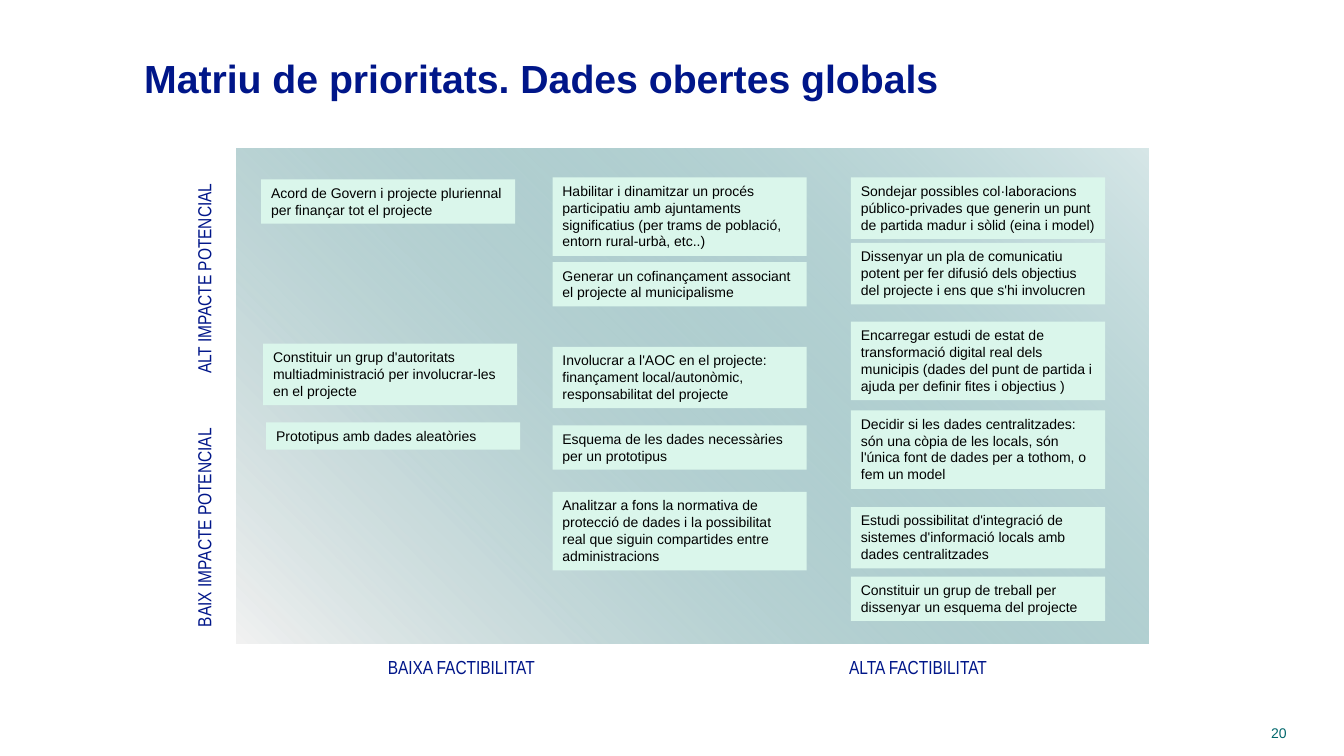
from pptx import Presentation
from pptx.dml.color import RGBColor
from pptx.enum.shapes import MSO_SHAPE
from pptx.enum.text import MSO_ANCHOR, MSO_AUTO_SIZE, PP_ALIGN
from pptx.oxml.ns import qn
from pptx.util import Inches, Pt
from lxml import etree

RECTANGLE = MSO_SHAPE.RECTANGLE
TOP, MIDDLE = MSO_ANCHOR.TOP, MSO_ANCHOR.MIDDLE
GROW, FIXED = MSO_AUTO_SIZE.SHAPE_TO_FIT_TEXT, MSO_AUTO_SIZE.NONE
LEFT, CENTER, RIGHT = PP_ALIGN.LEFT, PP_ALIGN.CENTER, PP_ALIGN.RIGHT

NAVY = RGBColor(0x00, 0x16, 0x89)
TEAL = RGBColor(0x00, 0x67, 0x6C)
PALE_GREY = RGBColor(0xF2, 0xF2, 0xF2)
MINT = RGBColor(0xDA, 0xF6, 0xEB)
BLACK = RGBColor(0x00, 0x00, 0x00)

NOTE_WIDTH = 2.52
NOTE_PADDING = 0.1
NOTE_LINE = 0.17

# Notes by column: left, top, number of lines, text
NOTES = [
    # Low feasibility
    (2.59, 1.78, 2, "Acord de Govern i projecte pluriennal per finançar tot el projecte"),
    (2.61, 3.41, 3, "Constituir un grup d'autoritats multiadministració per "
                    "involucrar-les en el projecte"),
    (2.64, 4.19, 1, "Prototipus amb dades aleatòries"),
    # Medium feasibility
    (5.48, 1.76, 4, "Habilitar i dinamitzar un procés participatiu amb ajuntaments "
                    "significatius (per trams de població, entorn rural-urbà, etc..)"),
    (5.48, 2.6, 2, "Generar un cofinançament associant el projecte al municipalisme"),
    (5.48, 3.44, 3, "Involucrar a l'AOC en el projecte: finançament local/autonòmic, "
                    "responsabilitat del projecte"),
    (5.48, 4.22, 2, "Esquema de les dades necessàries per un prototipus"),
    (5.48, 4.88, 4, "Analitzar a fons la normativa de protecció de dades i la "
                    "possibilitat real que siguin compartides entre administracions"),
    # High feasibility
    (8.44, 1.76, 3, "Sondejar possibles col·laboracions público-privades que generin "
                    "un punt de partida madur i sòlid (eina i model)"),
    (8.44, 2.41, 3, "Dissenyar un pla de comunicatiu potent per fer difusió dels "
                    "objectius del projecte i ens que s'hi involucren"),
    (8.44, 3.19, 4, "Encarregar estudi de estat de transformació digital real dels "
                    "municipis (dades del punt de partida i ajuda per definir fites "
                    "i objectius )"),
    (8.44, 4.07, 4, "Decidir si les dades centralitzades: són una còpia de les locals, "
                    "són l'única font de dades per a tothom, o fem un model"),
    (8.44, 5.03, 3, "Estudi possibilitat d'integració de sistemes d'informació locals "
                    "amb dades centralitzades"),
    (8.44, 5.72, 2, "Constituir un grup de treball per dissenyar un esquema del projecte"),
]

# Axis labels: left, top, width, rotation, text
AXIS_LABELS = [
    (2.32, 6.46, 4.51, 0, "BAIXA FACTIBILITAT"),
    (6.85, 6.46, 4.51, 0, "ALTA FACTIBILITAT"),
    (0.65, 5.07, 2.75, 270, "BAIX IMPACTE POTENCIAL"),
    (0.65, 2.6, 2.75, 270, "ALT IMPACTE POTENCIAL"),
]


class MatrixPage:
    title_font = {"name": "Arial", "size": Pt(28), "bold": True}
    label_font = {"name": "Arial Narrow", "size": Pt(13.5)}
    small_font = {"name": "Arial", "size": Pt(10)}

    def __init__(self, deck):
        self.page = deck.slides.add_slide(deck.slide_layouts[5])

    def set_text(self, shape, text, font, color, align=LEFT, anchor=TOP, auto_size=GROW):
        frame = shape.text_frame
        frame_format = {"word_wrap": True, "vertical_anchor": anchor,
                        "auto_size": auto_size}
        for key, value in frame_format.items():
            setattr(frame, key, value)
        para = frame.paragraphs[0]
        para.alignment = align
        span = para.add_run()
        span.text = text
        for key, value in font.items():
            setattr(span.font, key, value)
        span.font.color.rgb = color

    def title(self, text):
        shape = self.page.shapes.title
        place = {"left": 1.33, "top": 0.46, "width": 11.36, "height": 0.62}
        for key, value in place.items():
            setattr(shape, key, Inches(value))
        self.set_text(shape, text, self.title_font, NAVY, anchor=MIDDLE, auto_size=FIXED)

    def rectangle(self, left, top, width, height):
        shape = self.page.shapes.add_shape(
            RECTANGLE, Inches(left), Inches(top), Inches(width), Inches(height))
        shape.shadow.inherit = False
        shape.line.fill.background()
        return shape

    def background(self, left, top, width, height):
        shape = self.rectangle(left, top, width, height)
        fill = shape.fill
        fill.gradient()
        fill.gradient_angle = 45
        start, end = fill.gradient_stops
        for stop, color, position in ((start, PALE_GREY, 0), (end, TEAL, 1)):
            stop.color.rgb = color
            stop.position = position
        # The teal end is 16 % opaque
        teal = shape.element.spPr.findall(".//" + qn("a:srgbClr"))[-1]
        etree.SubElement(teal, qn("a:alpha"), val="16000")

    def note(self, left, top, lines, text):
        height = NOTE_PADDING + NOTE_LINE * lines
        shape = self.rectangle(left, top, NOTE_WIDTH, height)
        shape.fill.solid()
        shape.fill.fore_color.rgb = MINT
        self.set_text(shape, text, self.small_font, BLACK)

    def text_box(self, left, top, width, height, text, font, color, align):
        box = self.page.shapes.add_textbox(
            Inches(left), Inches(top), Inches(width), Inches(height))
        self.set_text(box, text, font, color, align)
        return box

    def axis_label(self, left, top, width, rotation, text):
        box = self.text_box(left, top, width, 0.33, text, self.label_font, NAVY, CENTER)
        box.rotation = rotation

    def page_number(self, number):
        self.text_box(12.02, 7.14, 0.84, 0.29, number, self.small_font, TEAL, RIGHT)


def main():
    deck = Presentation()
    deck.slide_width = Inches(13.33)
    deck.slide_height = Inches(7.5)
    matrix = MatrixPage(deck)

    # Title and page number
    matrix.title("Matriu de prioritats. Dades obertes globals")
    matrix.page_number("20")

    # Matrix background and axes
    matrix.background(2.35, 1.47, 9.04, 4.91)
    for label in AXIS_LABELS:
        matrix.axis_label(*label)

    # Notes
    for note in NOTES:
        matrix.note(*note)

    deck.save("out.pptx")


if __name__ == "__main__":
    main()
